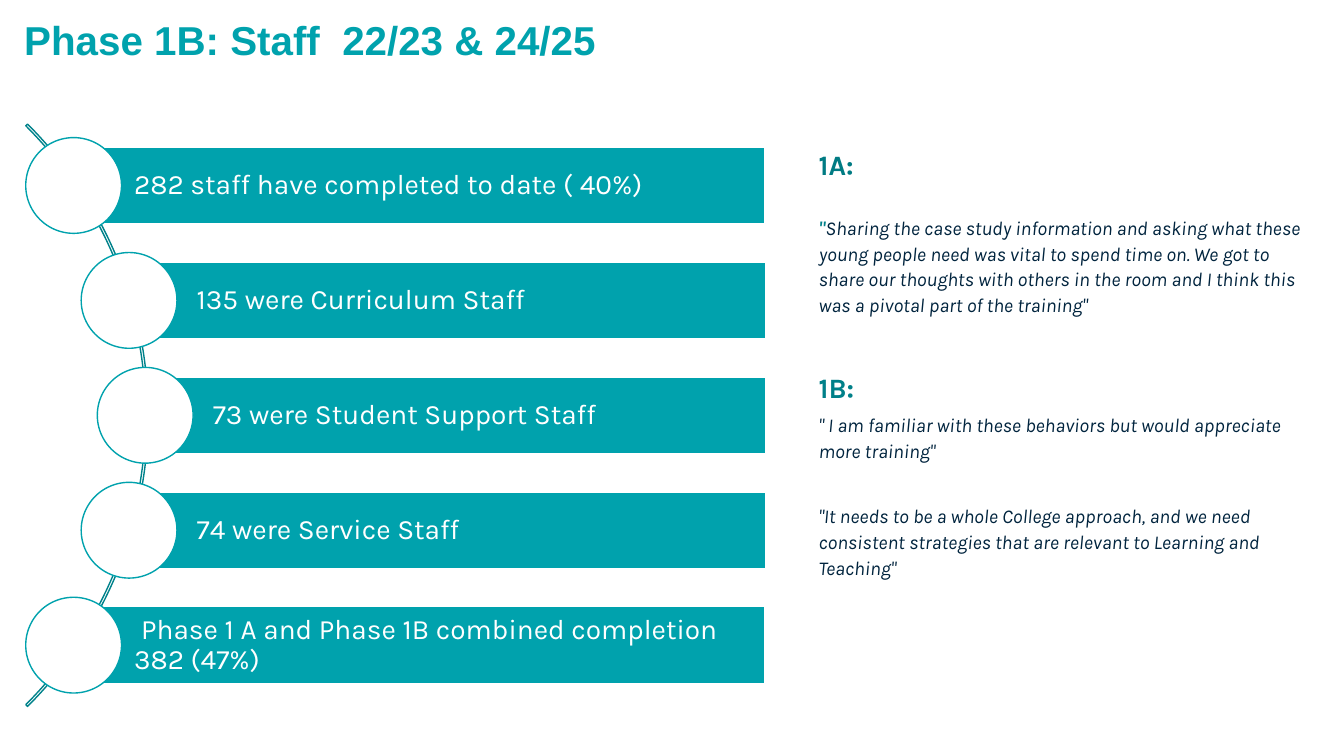
from dataclasses import dataclass

from pptx import Presentation
from pptx.dml.color import RGBColor
from pptx.enum.shapes import MSO_SHAPE
from pptx.enum.text import MSO_ANCHOR, PP_ALIGN
from pptx.util import Inches, Pt


@dataclass(frozen=True)
class Theme:
    teal: str = "00A2AD"
    arc: str = "00828B"
    phase_1a: str = "007B83"
    phase_1b: str = "008089"
    ink: str = "00243E"
    white: str = "FFFFFF"
    heading_font: str = "Arial"
    body_font: str = "Karla"
    title_size: float = 28.8
    label_size: float = 20
    quote_size: float = 14


theme = Theme()


def write(paragraph, text, size, color, font=theme.body_font, bold=False, italic=False):
    run = paragraph.add_run()
    run.text = text
    run.font.name = font
    run.font.size = Pt(size)
    run.font.bold = bold
    run.font.italic = italic
    run.font.color.rgb = RGBColor.from_string(color)


def add_outlined(kind, left, top, width, height, line, fill=None):
    shape = slide.shapes.add_shape(
        kind, Inches(left), Inches(top), Inches(width), Inches(height))
    shape.shadow.inherit = False
    if fill:
        shape.fill.solid()
        shape.fill.fore_color.rgb = RGBColor.from_string(fill)
    else:
        shape.fill.background()
    shape.line.color.rgb = RGBColor.from_string(line)
    shape.line.width = Pt(1)
    return shape


presentation = Presentation()
presentation.slide_width = Inches(13.33)
presentation.slide_height = Inches(7.5)
slide = presentation.slides.add_slide(presentation.slide_layouts[6])

# Quotes column
quotes_box = slide.shapes.add_textbox(
    Inches(8.02), Inches(1.38), Inches(5.05), Inches(5.48))
quotes_frame = quotes_box.text_frame
quotes_frame.word_wrap = True
heading = dict(size=theme.label_size, bold=True)
quote = dict(size=theme.quote_size, color=theme.ink, italic=True)
quote_mark = dict(quote, color=theme.phase_1b, bold=True)
# Each entry: space before in points, then the runs of the paragraph
quote_paragraphs = [
    (0, [("1A:", dict(heading, color=theme.phase_1a))]),
    (23, [('"', quote_mark),
          ("Sharing the case study information and asking what these young people "
           "need was vital to spend time on. We got to share our thoughts with "
           "others in the room and I think this was a pivotal part of the "
           'training"', quote)]),
    (36, [("1B:", dict(heading, color=theme.phase_1b))]),
    (5, [('" I am familiar with these behaviors but would appreciate more '
          'training"', quote)]),
    (28, [('"It needs to be a whole College approach, and we need consistent '
           'strategies that are relevant to Learning and Teaching"', quote)]),
]
for index, (space_before, runs) in enumerate(quote_paragraphs):
    paragraph = quotes_frame.add_paragraph() if index else quotes_frame.paragraphs[0]
    paragraph.line_spacing = 1.1
    paragraph.space_before = Pt(space_before)
    for text, text_format in runs:
        write(paragraph, text, **text_format)

# Arc behind the list, spanning 45 degrees either side of the horizontal
arc_diameter = 8.17
arc_middle = 4.12
arc = add_outlined(MSO_SHAPE.BLOCK_ARC, -6.7, arc_middle - arc_diameter / 2,
                   arc_diameter, arc_diameter, line=theme.arc)
for index, adjustment in enumerate((189, 27, 0.003)):
    arc.adjustments[index] = adjustment

# Staff list: each bar starts at the centre of its circle
row_pitch = 1.14
bar_height = 0.76
bar_right = 7.59
circle_size = 0.95
# Each entry: circle centre, first-line indent, label
staff_rows = [
    (0.73, 0, "282 staff have completed to date ( 40%)"),
    (1.28, 0.07, "135 were Curriculum Staff"),
    (1.44, 0.07, "73 were Student Support Staff"),
    (1.28, 0.07, "74 were Service Staff"),
    (0.73, 0.07, "Phase 1 A and Phase 1B combined completion 382 (47%)"),
]
for row, (center, indent, label) in enumerate(staff_rows):
    middle = arc_middle + (row - len(staff_rows) // 2) * row_pitch
    bar = add_outlined(MSO_SHAPE.RECTANGLE, center, middle - bar_height / 2,
                       bar_right - center, bar_height,
                       line=theme.white, fill=theme.teal)
    frame = bar.text_frame
    frame.word_wrap = True
    frame.vertical_anchor = MSO_ANCHOR.MIDDLE
    frame.margin_left = Inches(0.6)
    frame.margin_right = frame.margin_top = frame.margin_bottom = Inches(0.06)
    paragraph = frame.paragraphs[0]
    paragraph.alignment = PP_ALIGN.LEFT
    paragraph.line_spacing = 0.9
    paragraph._p.get_or_add_pPr().set("indent", str(Inches(indent)))
    write(paragraph, label, size=theme.label_size, color=theme.white)
    add_outlined(MSO_SHAPE.OVAL, center - circle_size / 2, middle - circle_size / 2,
                 circle_size, circle_size, line=theme.teal, fill=theme.white)

# Title
title_box = slide.shapes.add_textbox(0, Inches(0.16), Inches(8.02), Inches(0.47))
title_frame = title_box.text_frame
title_frame.word_wrap = True
title_frame.vertical_anchor = MSO_ANCHOR.MIDDLE
title_frame.margin_left = Inches(0.24)
title_frame.margin_top = title_frame.margin_bottom = 0
write(title_frame.paragraphs[0], "Phase 1B: Staff  22/23 & 24/25",
      size=theme.title_size, color=theme.teal, font=theme.heading_font, bold=True)

presentation.save("out.pptx")
